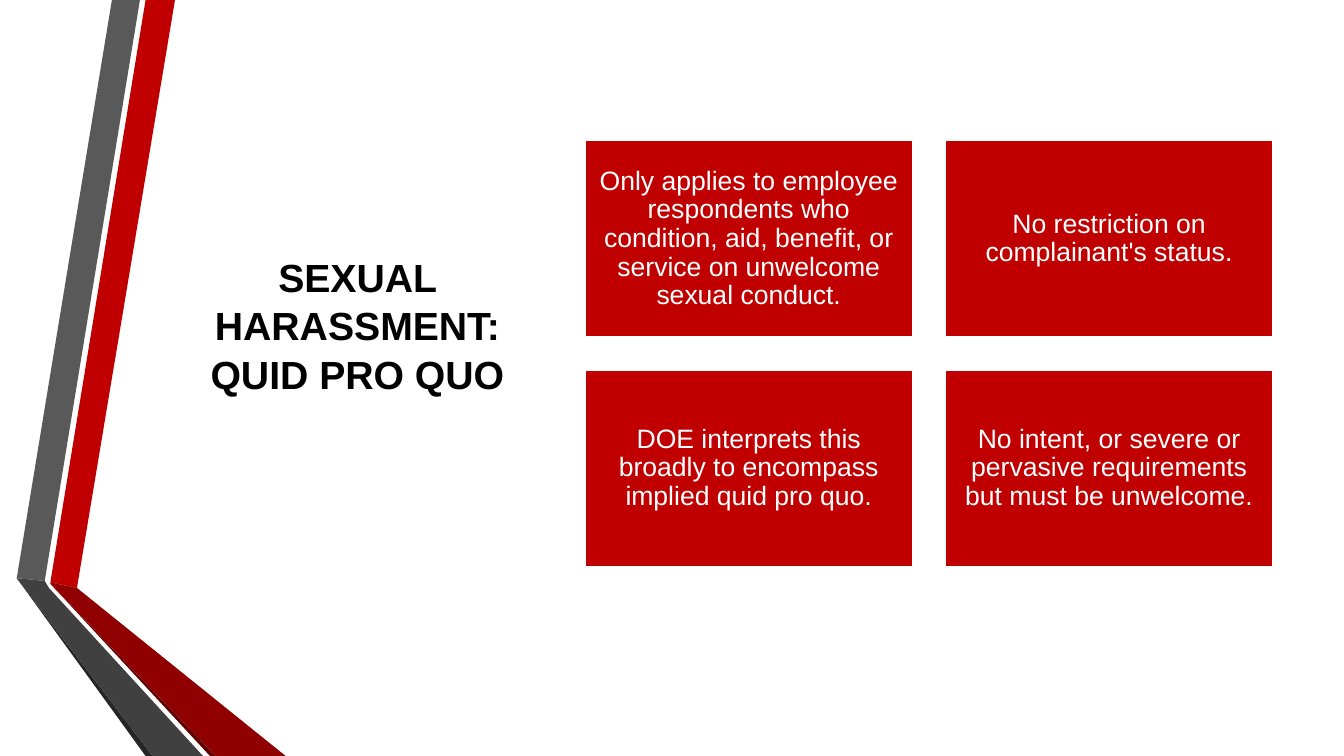
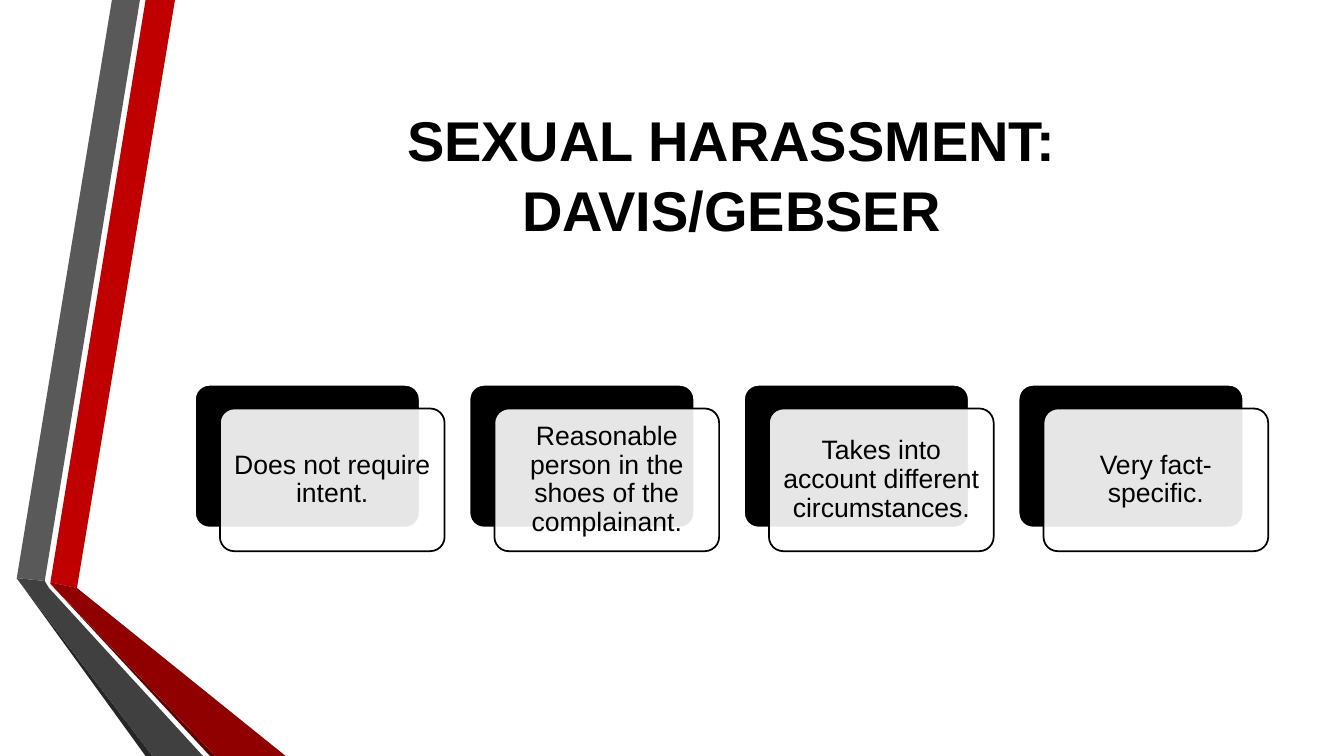
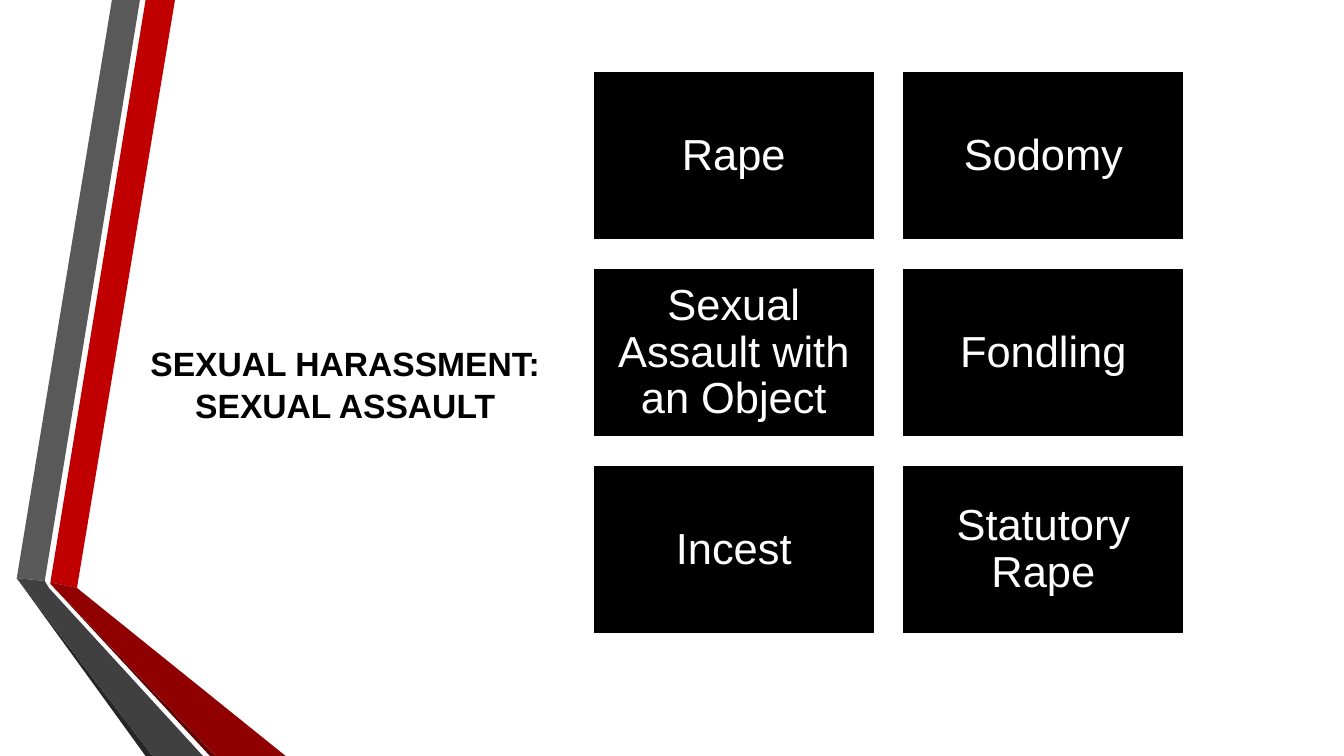
from lxml.etree import SubElement
from pptx import Presentation
from pptx.dml.color import RGBColor
from pptx.enum.shapes import MSO_SHAPE as Preset
from pptx.enum.text import MSO_ANCHOR as Anchor, PP_ALIGN as Align
from pptx.oxml.ns import qn
from pptx.util import Pt

FONT = "Arial"
COLORS = {
    "red": "C00000", "deep red": "900000", "maroon": "600000",
    "gray": "595959", "dark gray": "404040", "charcoal": "262626",
    "black": "000000", "white": "FFFFFF",
}
# Folded ribbons at the left edge: colour and corner points, back to front
RIBBONS = [
    ("red", [(36, 416.2), (55.4, 419.8), (124.6, 0), (104.4, 0)]),
    ("gray", [(100.1, 0), (79.9, 0), (11.5, 412.6), (31.7, 415.4)]),
    ("charcoal", [(11.5, 412.6), (104.4, 540), (108.7, 540)]),
    ("maroon", [(36, 416.9), (149.8, 540), (154.1, 540)]),
    ("deep red", [(36, 416.2), (36, 416.9), (154.1, 540), (203.8, 540), (55.4, 419.8)]),
    ("dark gray", [(145.4, 540), (34.6, 419.8), (31.7, 415.4), (11.5, 412.6), (108.7, 540)]),
]
SLIDES = [
    {
        "title": "SEXUAL HARASSMENT: QUID PRO QUO",
        "title area": (126, 175.7, 258.5, 152.6), "title size": 28, "anchor": Anchor.TOP,
        "cards": [
            "Only applies to employee respondents who condition, aid, benefit, "
            "or service on unwelcome sexual conduct.",
            "No restriction on complainant's status.",
            "DOE interprets this broadly to encompass implied quid pro quo.",
            "No intent, or severe or pervasive requirements but must be unwelcome.",
        ],
        "grid": {"left": 417.8, "top": 100.4, "width": 234, "color": "red",
                 "size": 19, "inset": 5.8},
    },
    {
        "title": "SEXUAL HARASSMENT: DAVIS/GEBSER",
        "title area": (139, 54, 766.8, 138.2), "title size": 40, "anchor": Anchor.MIDDLE,
        "cards": [
            "Does not require intent.",
            "Reasonable person in the shoes of the complainant.",
            "Takes into account different circumstances.",
            "Very fact-specific.",
        ],
    },
    {
        "title": "SEXUAL HARASSMENT: SEXUAL ASSAULT",
        "title area": (87.1, 240.5, 319, 77), "title size": 24, "anchor": Anchor.TOP,
        "cards": ["Rape", "Sodomy", "Sexual Assault with an Object",
                  "Fondling", "Incest", "Statutory Rape"],
        "grid": {"left": 423.6, "top": 51.1, "width": 201, "color": "black",
                 "size": 31, "inset": 9.4},
    },
]


def rgb(name):
    return RGBColor.from_string(COLORS[name])


def write(shape, text, size, color, inset=None, spacing=0.9, bold=False, anchor=Anchor.MIDDLE):
    frame = shape.text_frame
    frame.word_wrap = True
    frame.vertical_anchor = anchor
    if inset is not None:
        for side in ("left", "top", "right", "bottom"):
            setattr(frame, f"margin_{side}", Pt(inset))
    para = frame.paragraphs[0]
    para.alignment = Align.CENTER
    para.line_spacing = spacing
    span = para.add_run()
    span.text = text
    for name, value in {"name": FONT, "size": Pt(size), "bold": bold}.items():
        setattr(span.font, name, value)
    span.font.color.rgb = rgb(color)


def paint(shape, fill, line=None):
    shape.shadow.inherit = False
    shape.fill.solid()
    shape.fill.fore_color.rgb = rgb(fill)
    if line:
        shape.line.color.rgb = rgb(line)
        shape.line.width = Pt(1.25)
    else:
        shape.line.fill.background()


def add_card(page, preset, area, fill, line):
    card = page.shapes.add_shape(preset, *map(Pt, area))
    paint(card, fill, line)
    if preset == Preset.ROUNDED_RECTANGLE:
        card.adjustments[0] = 0.1
    return card


def add_ribbons(page):
    """Draw the ribbons on a page, then move them to its layout for all pages."""
    for color, (start, *others) in RIBBONS:
        builder = page.shapes.build_freeform(*start, scale=Pt(1))
        builder.add_line_segments(others, close=True)
        ribbon = builder.convert_to_shape()
        paint(ribbon, color)
        page.slide_layout.shapes.element.append(ribbon.element)


def add_grid(page, texts, left, top, width, color, size, inset):
    """Two columns of cards; height and gap follow from the card width."""
    height, gap = width * 0.6, width * 0.1
    for index, text in enumerate(texts):
        row, column = divmod(index, 2)
        area = (left + column * (width + gap), top + row * (height + gap), width, height)
        write(add_card(page, Preset.RECTANGLE, area, color, "white"), text, size, "white", inset)


def add_layered_row(page, texts):
    """One row of black cards, each under a translucent white one."""
    left, top, width, height, pitch = 139.3, 274.9, 160.5, 101.9, 196.1
    for index, text in enumerate(texts):
        x = left + index * pitch
        add_card(page, Preset.ROUNDED_RECTANGLE, (x, top, width, height), "black", "white")
        front = add_card(page, Preset.ROUNDED_RECTANGLE,
                         (x + 17.8, top + 16.9, width, height), "white", "black")
        fill_color = front.element.spPr.find(qn("a:solidFill"))[0]
        SubElement(fill_color, qn("a:alpha"), val="90000")
        write(front, text, 19, "black", 5.8)


def main():
    deck = Presentation()
    deck.slide_width, deck.slide_height = Pt(960), Pt(540)
    for number, content in enumerate(SLIDES):
        page = deck.slides.add_slide(deck.slide_layouts[6])
        if number == 0:
            add_ribbons(page)
        title = page.shapes.add_textbox(*map(Pt, content["title area"]))
        write(title, content["title"], content["title size"], "black",
              spacing=1.04, bold=True, anchor=content["anchor"])
        if "grid" in content:
            add_grid(page, content["cards"], **content["grid"])
        else:
            add_layered_row(page, content["cards"])
    deck.save("out.pptx")


if __name__ == "__main__":
    main()
